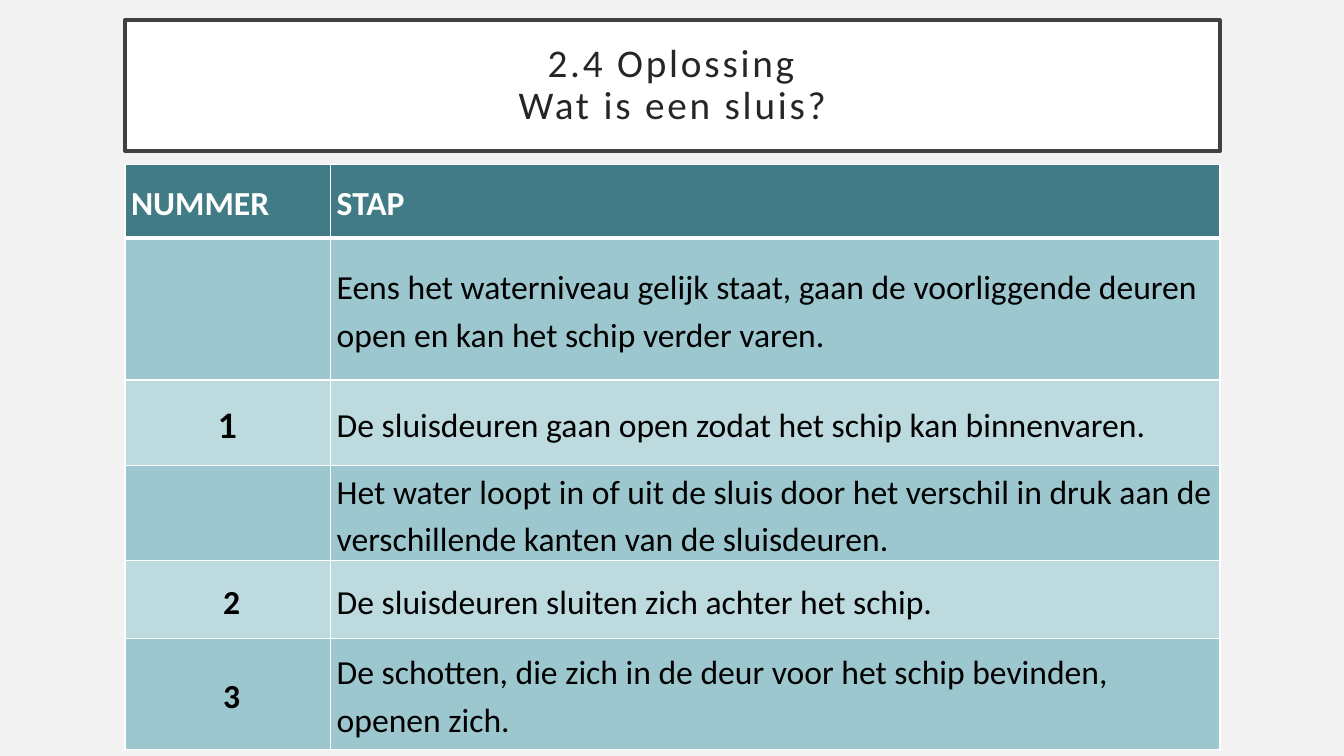
from lxml import etree
from pptx import Presentation, util as u
from pptx.dml.color import RGBColor
from pptx.enum import shapes, text
from pptx.oxml.ns import qn

# Content
TITLE = ["2.4 Oplossing", "Wat is een sluis?"]
ROWS = [
    ("NUMMER", "STAP"),
    ("", "Eens het waterniveau gelijk staat, gaan de voorliggende deuren open en kan het schip verder varen."),
    ("1", "De sluisdeuren gaan open zodat het schip kan binnenvaren."),
    ("", "Het water loopt in of uit de sluis door het verschil in druk aan de verschillende kanten van de sluisdeuren."),
    (" 2", "De sluisdeuren sluiten zich achter het schip."),
    (" 3", "De schotten, die zich in de deur voor het schip bevinden, openen zich."),
]

# Layout in inches
LEFT, WIDTH = 1.24, 10.86
TITLE_TOP, TITLE_HEIGHT = 0.2, 1.3
TABLE_TOP = 1.63
COLUMN_WIDTHS = [2.04, 8.82]
ROW_HEIGHTS = [0.73, 1.41, 0.85, 0.92, 0.77, 1.1]

# Colours
BACKGROUND = RGBColor(0xF2, 0xF2, 0xF2)
WHITE = RGBColor(0xFF, 0xFF, 0xFF)
BLACK = RGBColor(0, 0, 0)
FRAME = RGBColor(0x40, 0x40, 0x40)
TITLE_INK = RGBColor(0x26, 0x26, 0x26)
HEADER = RGBColor(0x41, 0x7B, 0x85)
BANDS = [RGBColor(0xBD, 0xDA, 0xDF), RGBColor(0x9C, 0xC7, 0xCE)]


def set_values(target, values):
    for name, value in values.items():
        setattr(target, name, value)


def add_text(paragraph, content, color, **font_values):
    run = paragraph.add_run()
    run.text = content
    set_values(run.font, {"name": "Calibri", **font_values})
    run.font.color.rgb = color
    return run


def add_borders(cell, bottom_width):
    properties = cell._tc.get_or_add_tcPr()
    for side, width in {"L": 1, "R": 1, "T": 1, "B": bottom_width}.items():
        line = etree.SubElement(properties, qn(f"a:ln{side}"), w=str(u.Pt(width)))
        fill = etree.SubElement(line, qn("a:solidFill"))
        etree.SubElement(fill, qn("a:srgbClr"), val=str(WHITE))


def add_title(slide):
    box = slide.shapes.add_shape(
        shapes.MSO_SHAPE.RECTANGLE,
        *map(u.Inches, (LEFT, TITLE_TOP, WIDTH, TITLE_HEIGHT)))
    box.shadow.inherit = False
    box.fill.solid()
    box.fill.fore_color.rgb = WHITE
    box.line.color.rgb = FRAME
    box.line.width = u.Pt(2.5)
    frame = box.text_frame
    set_values(frame, {"word_wrap": True, "vertical_anchor": text.MSO_ANCHOR.MIDDLE})
    set_values(frame, {f"margin_{side}": u.Inches(0.2)
                       for side in ("left", "top", "right", "bottom")})
    paragraph = frame.paragraphs[0]
    set_values(paragraph, {"alignment": text.PP_ALIGN.CENTER, "line_spacing": 0.9})
    for index, line in enumerate(TITLE):
        if index:
            paragraph.add_line_break()
        run = add_text(paragraph, line, TITLE_INK, size=u.Pt(28))
        run.font._element.set("spc", "200")


def add_steps(slide):
    table = slide.shapes.add_table(
        len(ROWS), len(COLUMN_WIDTHS),
        *map(u.Inches, (LEFT, TABLE_TOP, WIDTH, sum(ROW_HEIGHTS)))).table
    for column, width in zip(table.columns, COLUMN_WIDTHS):
        column.width = u.Inches(width)
    for r, (contents, height) in enumerate(zip(ROWS, ROW_HEIGHTS)):
        table.rows[r].height = u.Inches(height)
        is_header = r == 0
        for c, content in enumerate(contents):
            cell = table.cell(r, c)
            set_values(cell, {
                "margin_left": u.Inches(0.06), "margin_right": u.Inches(0.06),
                "margin_top": 0, "margin_bottom": 0,
                "vertical_anchor": text.MSO_ANCHOR.MIDDLE})
            add_borders(cell, 3 if is_header else 1)
            cell.fill.solid()
            cell.fill.fore_color.rgb = HEADER if is_header else BANDS[r % 2]
            if not content:
                continue
            is_number = c == 0 and not is_header
            paragraph = cell.text_frame.paragraphs[0]
            set_values(paragraph, {
                "alignment": text.PP_ALIGN.CENTER if is_number else text.PP_ALIGN.LEFT,
                "line_spacing": 1.16, "space_after": u.Pt(8)})
            add_text(paragraph, content, WHITE if is_header else BLACK,
                     size=u.Pt(24), bold=is_header or is_number,
                     name="Lato" if content == "1" else "Calibri")


def main():
    presentation = Presentation()
    presentation.slide_width = u.Inches(13.33)
    presentation.slide_height = u.Inches(7.5)
    slide = presentation.slides.add_slide(presentation.slide_layouts[6])
    slide.background.fill.solid()
    slide.background.fill.fore_color.rgb = BACKGROUND
    add_title(slide)
    add_steps(slide)
    presentation.save("out.pptx")


if __name__ == "__main__":
    main()
